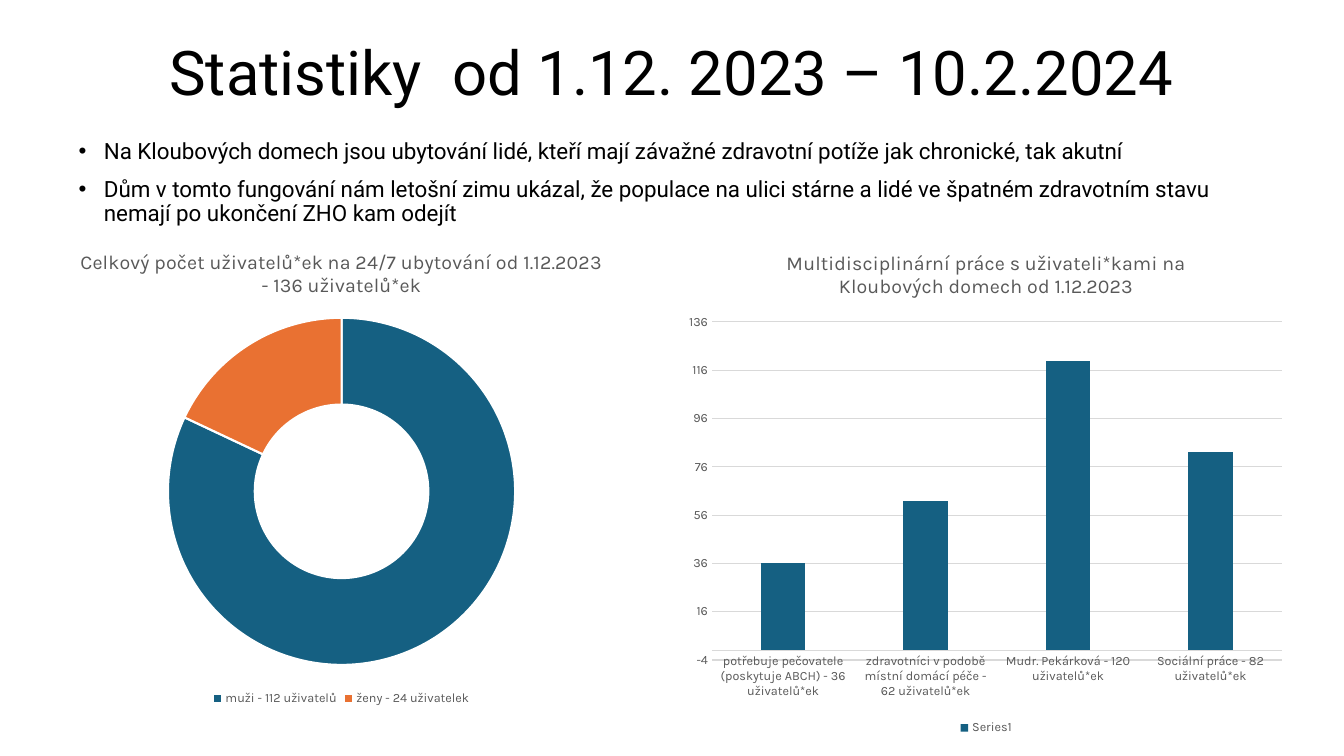
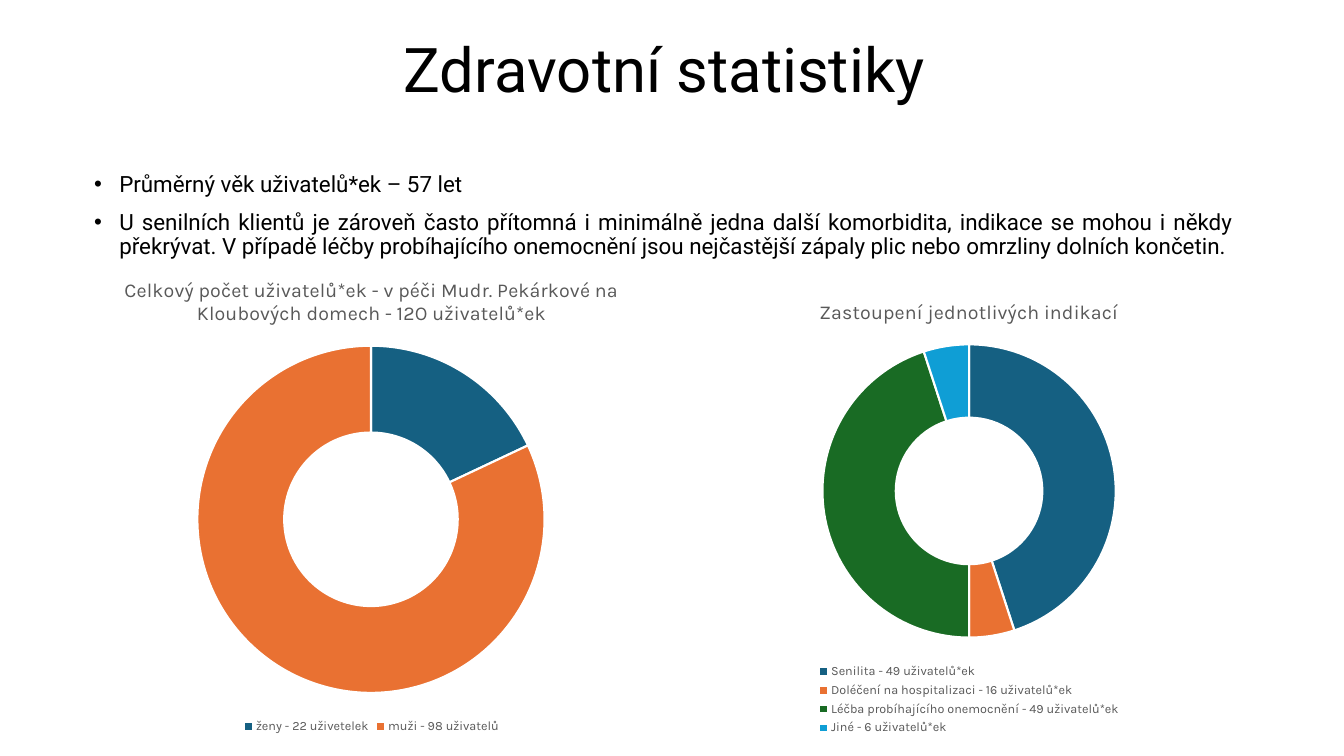
from pptx import Presentation
from pptx import util as u
from pptx.chart import data as chart_data
from pptx.dml import color
from pptx.enum import chart as ce
from pptx.enum import text as te
from pptx.oxml import parse_xml
from pptx.oxml import ns

# Shared colours and fonts
BLACK = color.RGBColor(0x00, 0x00, 0x00)
WHITE = color.RGBColor(0xFF, 0xFF, 0xFF)
GREY = color.RGBColor(0x59, 0x59, 0x59)
GRID = color.RGBColor(0xD9, 0xD9, 0xD9)
BLUE = color.RGBColor(0x15, 0x60, 0x82)
ORANGE = color.RGBColor(0xE9, 0x71, 0x32)
GREEN = color.RGBColor(0x19, 0x6B, 0x24)
SKY = color.RGBColor(0x0F, 0x9E, 0xD5)
PALETTE = (BLUE, ORANGE, GREEN, SKY)
TEXT_FONT = "Roboto"
CHART_FONT = "Karla"


def set_font(font, name, size, rgb):
    font.name = name
    font.size = u.Pt(size)
    font.bold = False
    font.color.rgb = rgb


def place(shape, left, top, width, height):
    shape.left, shape.top = u.Pt(left), u.Pt(top)
    shape.width, shape.height = u.Pt(width), u.Pt(height)


def add_text_slide(presentation, title, title_top, items, body_left, body_top,
                   alignment):
    """Add a slide with a centred title and a bulleted list."""
    slide = presentation.slides.add_slide(presentation.slide_layouts[1])

    # Title
    heading = slide.shapes.title
    place(heading, 66, title_top, 828, 104)
    heading.text_frame.text = title
    heading.text_frame.auto_size = te.MSO_AUTO_SIZE.NONE
    paragraph = heading.text_frame.paragraphs[0]
    paragraph.alignment = te.PP_ALIGN.CENTER
    paragraph.line_spacing = 0.9
    set_font(paragraph.font, TEXT_FONT, 44, BLACK)

    # List
    body = slide.placeholders[1]
    place(body, body_left, body_top, 828, 72)
    body.text_frame.text = "\n".join(items)
    body.text_frame.auto_size = te.MSO_AUTO_SIZE.NONE
    for paragraph in body.text_frame.paragraphs:
        paragraph.alignment = alignment
        paragraph.line_spacing = 0.9
        paragraph.space_before = u.Pt(10)
        set_font(paragraph.font, TEXT_FONT, 16, BLACK)
        properties = paragraph._p.get_or_add_pPr()
        properties.set("marL", str(u.Pt(18)))
        properties.set("indent", str(-u.Pt(18)))
    return slide


def set_plot_area(chart, frame, plot):
    """Fix the inner plot area; frame and plot are slide rectangles."""
    left, top, width, height = frame
    fractions = {
        "x": (plot[0] - left) / width,
        "y": (plot[1] - top) / height,
        "w": plot[2] / width,
        "h": plot[3] / height,
    }
    values = "".join(f'<c:{key} val="{value:.4f}"/>'
                     for key, value in fractions.items())
    layout = parse_xml(
        f'<c:layout {ns.nsdecls("c")}><c:manualLayout>'
        '<c:layoutTarget val="inner"/><c:xMode val="edge"/>'
        f'<c:yMode val="edge"/>{values}</c:manualLayout></c:layout>')
    plot_area = chart.element.chart.plotArea
    for old in plot_area.findall(ns.qn("c:layout")):
        plot_area.remove(old)
    plot_area.insert(0, layout)


def add_chart(slide, kind, title, series_name, values, frame, plot):
    """Add a chart with the shared title, legend and plot placement."""
    data = chart_data.CategoryChartData()
    data.categories = list(values)
    data.add_series(series_name, list(values.values()))
    chart = slide.shapes.add_chart(
        kind, *(u.Pt(length) for length in frame), data).chart
    set_font(chart.font, CHART_FONT, 10, BLACK)

    chart.has_title = True
    chart.chart_title.include_in_layout = False
    chart.chart_title.text_frame.text = title
    set_font(chart.chart_title.text_frame.paragraphs[0].font,
             CHART_FONT, 14, GREY)

    chart.has_legend = True
    chart.legend.position = ce.XL_LEGEND_POSITION.BOTTOM
    chart.legend.include_in_layout = False
    set_font(chart.legend.font, CHART_FONT, 9, GREY)
    set_plot_area(chart, frame, plot)
    return chart


def add_doughnut(slide, title, values, frame, left, top, diameter):
    chart = add_chart(slide, ce.XL_CHART_TYPE.DOUGHNUT, title, "Series 1",
                      values, frame, (left, top, diameter, diameter))
    plot = chart.plots[0]
    plot.vary_by_categories = True
    plot._element.find(ns.qn("c:holeSize")).set("val", "75")
    for index, rgb in zip(range(len(values)), PALETTE):
        point_format = plot.series[0].points[index].format
        point_format.fill.solid()
        point_format.fill.fore_color.rgb = rgb
        point_format.line.color.rgb = WHITE
        point_format.line.width = u.Pt(1.5)


def add_columns(slide, title, values, frame, plot_rectangle):
    chart = add_chart(slide, ce.XL_CHART_TYPE.COLUMN_CLUSTERED, title,
                      "Series1", values, frame, plot_rectangle)
    plot = chart.plots[0]
    plot.vary_by_categories = False
    plot.gap_width, plot.overlap = 219, -27
    fill = plot.series[0].format.fill
    fill.solid()
    fill.fore_color.rgb = BLUE

    # Axes
    for axis in (chart.category_axis, chart.value_axis):
        axis.major_tick_mark = ce.XL_TICK_MARK.NONE
        axis.minor_tick_mark = ce.XL_TICK_MARK.NONE
        set_font(axis.tick_labels.font, CHART_FONT, 9, GREY)
    value_axis = chart.value_axis
    value_axis.minimum_scale, value_axis.maximum_scale = -4, 136
    value_axis.major_unit = 20
    value_axis.has_major_gridlines = True
    value_axis.format.line.fill.background()
    for line in (chart.category_axis.format.line,
                 value_axis.major_gridlines.format.line):
        line.color.rgb = GRID
        line.width = u.Pt(0.75)


def add_statistics(presentation):
    slide = add_text_slide(
        presentation, "Statistiky  od 1.12. 2023 – 10.2.2024", 2,
        ["Na Kloubových domech jsou ubytování lidé, kteří mají závažné "
         "zdravotní potíže jak chronické, tak akutní",
         "Dům v tomto fungování nám letošní zimu ukázal, že populace na "
         "ulici stárne a lidé ve špatném zdravotním stavu nemají po "
         "ukončení ZHO kam odejít"],
        49, 96.5, te.PP_ALIGN.LEFT)
    add_doughnut(
        slide,
        "Celkový počet uživatelů*ek na 24/7 ubytování od 1.12.2023 "
        "- 136 uživatelů*ek",
        {"muži - 112 uživatelů": 82, "ženy - 24 uživatelek": 18},
        (4, 165, 480, 342), 120, 227, 248)
    add_columns(
        slide,
        "Multidisciplinární práce s uživateli*kami na Kloubových domech "
        "od 1.12.2023",
        {"potřebuje pečovatele (poskytuje ABCH) - 36 uživatelů*ek": 36,
         "zdravotníci v podobě místní domácí péče - 62 uživatelů*ek": 62,
         "Mudr. Pekárková - 120 uživatelů*ek": 120,
         "Sociální práce - 82 uživatelů*ek": 82},
        (484, 165, 441, 363), (508.5, 230, 407, 241.5))


def add_health_statistics(presentation):
    slide = add_text_slide(
        presentation, "Zdravotní statistiky ", 0,
        ["Průměrný věk uživatelů*ek – 57 let",
         "U senilních klientů je zároveň často přítomná i minimálně jedna "
         "další komorbidita, indikace se mohou i někdy překrývat. V případě "
         "léčby probíhajícího onemocnění jsou nejčastější zápaly plic nebo "
         "omrzliny dolních končetin."],
        60, 120, te.PP_ALIGN.JUSTIFY)
    add_doughnut(
        slide,
        "Celkový počet uživatelů*ek - v péči Mudr. Pekárkové na Kloubových "
        "domech - 12O uživatelů*ek",
        {"ženy - 22 uživetelek": 18, "muži - 98 uživatelů": 82},
        (29, 185, 473, 342), 141, 247, 248)
    add_doughnut(
        slide, "Zastoupení jednotlivých indikací",
        {"Senilita - 49 uživatelů*ek": 45,
         "Doléčení na hospitalizaci - 16 uživatelů*ek": 5,
         "Léčba probíhajícího onemocnění - 49 uživatelů*ek": 45,
         "Jiné - 6 uživatelů*ek": 5},
        (474.5, 201, 435.5, 327), 587.5, 246, 209.5)


def main():
    presentation = Presentation()
    presentation.slide_width = u.Pt(960)
    presentation.slide_height = u.Pt(540)
    add_statistics(presentation)
    add_health_statistics(presentation)
    presentation.save("out.pptx")


if __name__ == "__main__":
    main()
